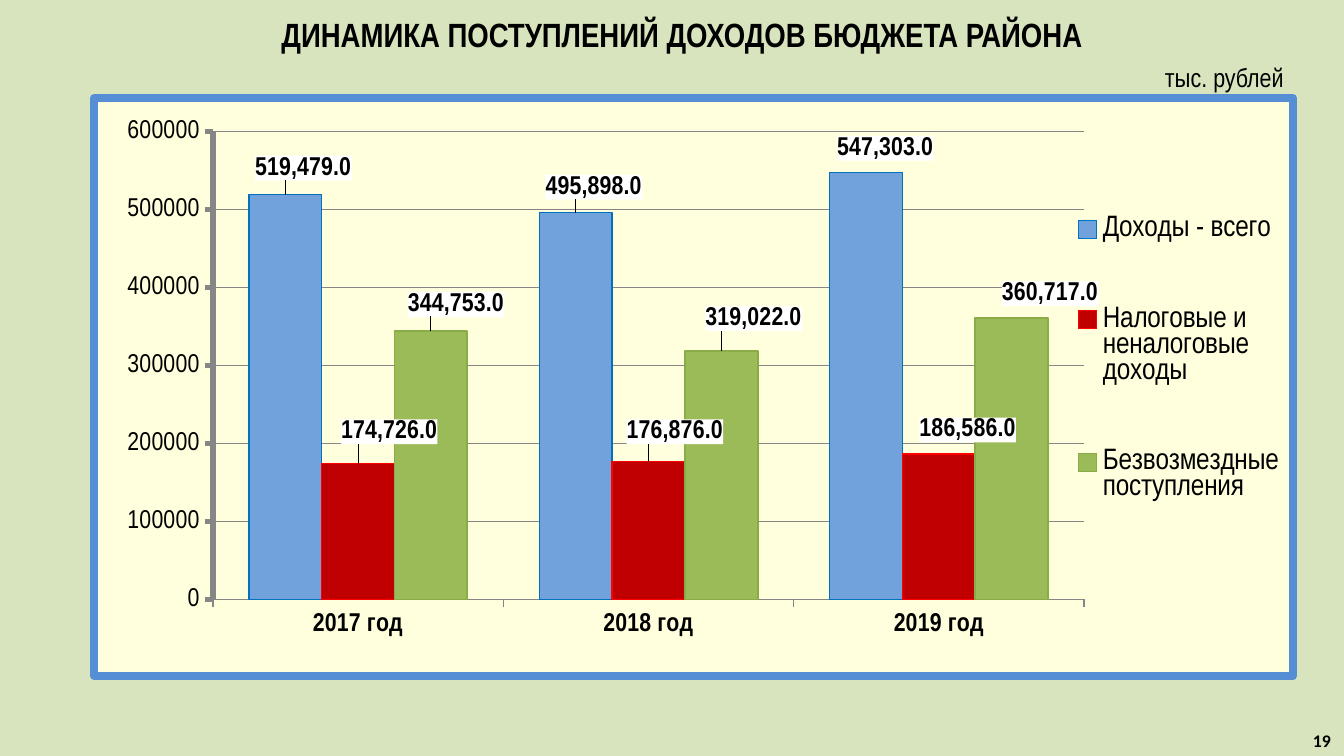
from dataclasses import dataclass

import pptx
import pptx.chart.data
import pptx.dml.color
import pptx.enum.chart
import pptx.enum.text
import pptx.oxml
import pptx.oxml.ns
import pptx.util
from pptx.util import Inches


@dataclass(frozen=True)
class Theme:
    background: str = "D7E4BD"
    chart_fill: str = "FFFFDD"
    chart_border: str = "558ED5"
    label_fill: str = "FFFFFF"
    axis: str = "868686"
    ink: str = "000000"
    narrow: str = "Arial Narrow"
    number_font: str = "Calibri"
    title_size: float = 18
    legend_size: float = 16
    body_size: float = 14
    number_size: float = 11.9


@dataclass(frozen=True)
class Revenue:
    name: str
    amounts: tuple[int, ...]
    fill: str
    line: str
    line_width: float
    label_shifts: tuple[tuple[float, float], ...]


THEME = Theme()
YEARS = ("2017 год", "2018 год", "2019 год")
REVENUES = (
    Revenue("Доходы - всего", (519479, 495898, 547303), "72A2DC", "0070C0", 0.75,
            ((1.5, -1.5), (1.5, -1.4), (1.6, -1.2))),
    Revenue("Налоговые и неналоговые доходы", (174726, 176876, 186586), "C00000", "FF0000", 0.75,
            ((2.6, -2.4), (2.2, -2.1), (2.4, -1.1))),
    Revenue("Безвозмездные поступления", (344753, 319022, 360717), "9BBB59", "8AAC46", 1,
            ((2.1, -1.5), (2.7, -2.5), (3.2, -1.2))),
)
NUMBER_FORMAT = "#,##0.0"
CHART_NS = pptx.oxml.ns.nsdecls("c", "a")
NO_LEADERS = (
    f'<c:extLst {CHART_NS}><c:ext uri="{{CE6537A1-D6FC-4f65-9D91-7224C49458BB}}" '
    'xmlns:c15="http://schemas.microsoft.com/office/drawing/2012/chart">'
    '<c15:showLeaderLines val="0"/></c:ext></c:extLst>')


def rgb(color: str) -> pptx.dml.color.RGBColor:
    return pptx.dml.color.RGBColor.from_string(color)


def style_font(font, size: float, bold: bool = False, face: str = THEME.narrow) -> None:
    font.name = face
    font.size = pptx.util.Pt(size)
    font.bold = bold
    font.color.rgb = rgb(THEME.ink)


def add_text(slide, text: str, left: float, top: float, width: float, height: float, *,
             size: float, bold: bool = False, face: str = THEME.narrow, small_caps: bool = False,
             align=pptx.enum.text.PP_ALIGN.RIGHT,
             anchor=pptx.enum.text.MSO_ANCHOR.MIDDLE) -> None:
    frame = slide.shapes.add_textbox(
        Inches(left), Inches(top), Inches(width), Inches(height)).text_frame
    frame.word_wrap = True
    frame.vertical_anchor = anchor
    paragraph = frame.paragraphs[0]
    paragraph.alignment = align
    run = paragraph.add_run()
    run.text = text
    style_font(run.font, size, bold, face)
    if small_caps:
        run._r.get_or_add_rPr().set("cap", "small")


def percent_layout(x: float, y: float, width: float = 0, height: float = 0, inner: bool = False):
    target = '<c:layoutTarget val="inner"/>' if inner else ""
    modes = '<c:xMode val="edge"/><c:yMode val="edge"/>' if width else ""
    extent = f'<c:w val="{width / 100}"/><c:h val="{height / 100}"/>' if width else ""
    return pptx.oxml.parse_xml(
        f'<c:layout {CHART_NS}><c:manualLayout>{target}{modes}'
        f'<c:x val="{x / 100}"/><c:y val="{y / 100}"/>{extent}</c:manualLayout></c:layout>')


def replace_layout(parent, layout, position: int) -> None:
    for existing in parent.findall(pptx.oxml.ns.qn("c:layout")):
        parent.remove(existing)
    parent.insert(position, layout)


def label_format():
    return pptx.oxml.parse_xml(
        f'<c:numFmt {CHART_NS} formatCode="{NUMBER_FORMAT}" sourceLinked="0"/>')


def fill_and_line(fill: str, line: str):
    return pptx.oxml.parse_xml(
        f'<c:spPr {CHART_NS}><a:solidFill><a:srgbClr val="{fill}"/></a:solidFill>{line}</c:spPr>')


def style_series(series, revenue: Revenue) -> None:
    series.invert_if_negative = False
    series.format.fill.solid()
    series.format.fill.fore_color.rgb = rgb(revenue.fill)
    series.format.line.color.rgb = rgb(revenue.line)
    series.format.line.width = pptx.util.Pt(revenue.line_width)
    labels = series.data_labels
    labels.show_value = True
    labels.number_format = NUMBER_FORMAT
    labels.number_format_is_linked = False
    labels.position = pptx.enum.chart.XL_LABEL_POSITION.OUTSIDE_END
    style_font(labels.font, THEME.body_size, True)
    for year in range(len(YEARS)):
        label = series.points[year].data_label
        style_font(label.font, THEME.body_size, True)
        label.position = pptx.enum.chart.XL_LABEL_POSITION.OUTSIDE_END
    label_nodes = labels._element.findall(pptx.oxml.ns.qn("c:dLbl"))
    for node, shift in zip(label_nodes, revenue.label_shifts):
        for existing in node.findall(pptx.oxml.ns.qn("c:spPr")):
            node.remove(existing)
        background = fill_and_line(THEME.label_fill, "<a:ln><a:noFill/></a:ln>")
        for position, part in enumerate((percent_layout(*shift), label_format(), background), 1):
            node.insert(position, part)
    labels._element.append(pptx.oxml.parse_xml(NO_LEADERS))


def style_axis(axis, line_width: float, bold: bool) -> None:
    style_font(axis.tick_labels.font, THEME.body_size, bold)
    axis.major_tick_mark = pptx.enum.chart.XL_TICK_MARK.OUTSIDE
    axis.format.line.color.rgb = rgb(THEME.axis)
    axis.format.line.width = pptx.util.Pt(line_width)


def frame_chart(chart) -> None:
    border = (f'<a:ln w="{pptx.util.Pt(4.5)}"><a:solidFill>'
              f'<a:srgbClr val="{THEME.chart_border}"/></a:solidFill><a:round/></a:ln>')
    chart._chartSpace.find(pptx.oxml.ns.qn("c:chart")).addnext(
        fill_and_line(THEME.chart_fill, border))


def add_revenue_chart(slide) -> None:
    figures = pptx.chart.data.CategoryChartData(number_format="0")
    figures.categories = YEARS
    for revenue in REVENUES:
        figures.add_series(revenue.name, revenue.amounts)
    chart = slide.shapes.add_chart(
        pptx.enum.chart.XL_CHART_TYPE.COLUMN_CLUSTERED,
        Inches(0.67), Inches(0.7), Inches(8.98), Inches(4.36), figures).chart
    chart.has_title = False
    style_font(chart.font, THEME.title_size, face=THEME.number_font)
    frame_chart(chart)

    plot = chart.plots[0]
    plot.gap_width = 99
    plot.overlap = 0
    plot.vary_by_categories = False
    for series, revenue in zip(plot.series, REVENUES):
        style_series(series, revenue)

    style_axis(chart.category_axis, 0.75, True)
    amounts = chart.value_axis
    style_axis(amounts, 3, False)
    amounts.minimum_scale = 0
    amounts.maximum_scale = 600000
    amounts.major_unit = 100000
    amounts.tick_labels.number_format = "0"
    amounts.tick_labels.number_format_is_linked = False
    amounts.major_gridlines.format.line.color.rgb = rgb(THEME.axis)
    amounts.major_gridlines.format.line.width = pptx.util.Pt(0.75)

    chart.has_legend = True
    chart.legend.position = pptx.enum.chart.XL_LEGEND_POSITION.RIGHT
    chart.legend.include_in_layout = False
    style_font(chart.legend.font, THEME.legend_size)
    replace_layout(chart.legend._element, percent_layout(81.5, 9.4, 18, 71.5), 1)
    plot_area = chart._chartSpace.chart.plotArea
    replace_layout(plot_area, percent_layout(9.9, 5.8, 72.7, 81, inner=True), 0)


def main() -> None:
    deck = pptx.Presentation()
    deck.slide_width = Inches(10)
    deck.slide_height = deck.slide_width * 9 // 16
    slide = deck.slides.add_slide(deck.slide_layouts[6])
    slide.background.fill.solid()
    slide.background.fill.fore_color.rgb = rgb(THEME.background)
    add_text(slide, "ДИНАМИКА ПОСТУПЛЕНИЙ ДОХОДОВ БЮДЖЕТА РАЙОНА", 0.35, 0.04, 9.45, 0.42,
             size=THEME.title_size, bold=True, align=pptx.enum.text.PP_ALIGN.CENTER)
    add_revenue_chart(slide)
    add_text(slide, "тыс. рублей", 8.31, 0.45, 1.34, 0.24, size=THEME.body_size)
    add_text(slide, "19", 9.33, 5.35, 0.67, 0.26, size=THEME.number_size, bold=True,
             face=THEME.number_font, small_caps=True, anchor=pptx.enum.text.MSO_ANCHOR.TOP)
    deck.save("out.pptx")


if __name__ == "__main__":
    main()
